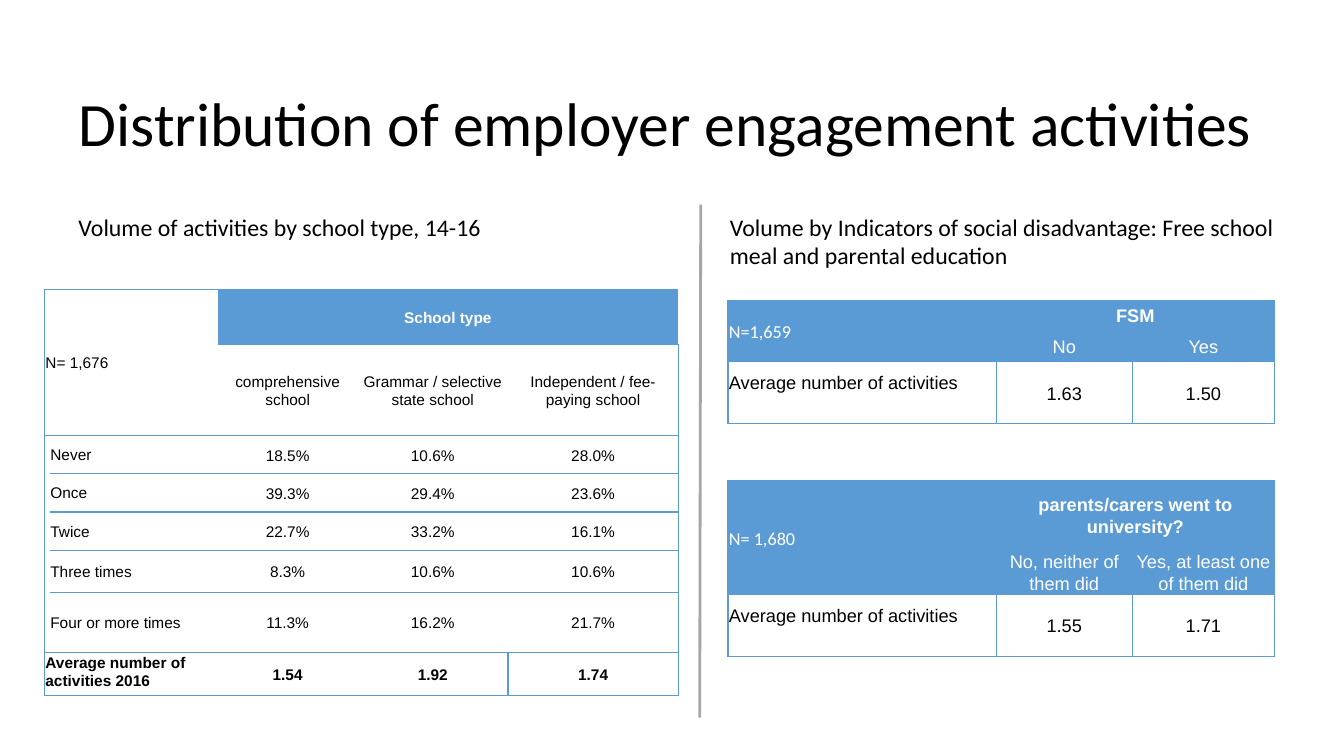
from pptx import Presentation
from pptx import util as u
from pptx.dml.color import RGBColor
from pptx.enum import shapes, text
from pptx.oxml import ns
from lxml import etree

BLUE, GREY, BLACK, WHITE = "5B9BD5", "A6A6A6", "000000", "FFFFFF"
LEFT, CENTER = text.PP_ALIGN.LEFT, text.PP_ALIGN.CENTER
MIDDLE, TOP = text.MSO_ANCHOR.MIDDLE, text.MSO_ANCHOR.TOP


def colour(value):
    return RGBColor.from_string(value)


def write(frame, words, size=11, font="Arial", color=BLACK, bold=False,
          align=LEFT, spacing=1.07):
    para = frame.paragraphs[0]
    para.alignment = align
    para.line_spacing = spacing
    span = para.add_run()
    span.text = words
    span.font.name, span.font.size, span.font.bold = font, u.Pt(size), bold
    span.font.color.rgb = colour(color)


class Page:
    """One slide and the style its elements share."""
    font = "Calibri"
    inset = u.Inches(0.1)

    def __init__(self, deck):
        self.slide = deck.slides.add_slide(deck.slide_layouts[5])

    def fill_box(self, box, words, size, anchor, spacing):
        frame = box.text_frame
        frame.word_wrap = True
        frame.auto_size = text.MSO_AUTO_SIZE.NONE
        frame.vertical_anchor = anchor
        frame.margin_left = frame.margin_right = self.inset
        frame.margin_top = frame.margin_bottom = self.inset
        write(frame, words, size=size, font=self.font, spacing=spacing)

    def title(self, words, left, top, width, height):
        box = self.slide.shapes.title
        box.left, box.top = u.Inches(left), u.Inches(top)
        box.width, box.height = u.Inches(width), u.Inches(height)
        self.fill_box(box, words, 44, MIDDLE, 1.0)

    def heading(self, words, left, top, width, height):
        box = self.slide.shapes.add_textbox(*map(u.Inches, (left, top, width, height)))
        self.fill_box(box, words, 17, TOP, 0.97)

    def divider(self, x1, y1, x2, y2):
        line = self.slide.shapes.add_connector(
            shapes.MSO_CONNECTOR.STRAIGHT, *map(u.Inches, (x1, y1, x2, y2)))
        line.line.color.rgb = colour(GREY)
        line.line.width = u.Pt(2)
        etree.SubElement(line._element.spPr, ns.qn("a:effectLst"))

    def table(self, left, top, columns, rows, merges):
        table = self.slide.shapes.add_table(
            len(rows), len(columns), u.Inches(left), u.Inches(top),
            u.Inches(sum(columns)), u.Inches(sum(rows))).table
        table.first_row = table.horz_banding = False
        for column, width in zip(table.columns, columns):
            column.width = u.Inches(width)
        for row, height in zip(table.rows, rows):
            row.height = u.Inches(height)
        for first, last in merges:
            table.cell(*first).merge(table.cell(*last))
        return table

    def cell(self, cell, words="", fill=WHITE, sides="LRTB", anchor=MIDDLE,
             margins=(0.01, 0.01), **style):
        cell.margin_left, cell.margin_top = map(u.Inches, margins)
        cell.margin_right, cell.margin_bottom = u.Inches(0.01), 0
        cell.vertical_anchor = anchor
        if words:
            write(cell.text_frame, words, **style)
        # Borders come before the fill in the cell properties
        props = cell._tc.get_or_add_tcPr()
        for side in "LRTB":
            edge = etree.SubElement(props, ns.qn("a:ln" + side), w=str(u.Pt(1)))
            if side in sides:
                paint = etree.SubElement(edge, ns.qn("a:solidFill"))
                etree.SubElement(paint, ns.qn("a:srgbClr"), val=BLUE)
            else:
                etree.SubElement(edge, ns.qn("a:noFill"))
        cell.fill.solid()
        cell.fill.fore_color.rgb = colour(fill)


def school_sides(row, col):
    """Horizontal rules everywhere except inside the merged left blocks."""
    sides = "TB"
    if row < 2 and col < 3:
        sides = "TB"[row]
    elif 2 <= row <= 6 and col == 0:
        sides = {2: "T", 6: "B"}.get(row, "")
    if col == 0 or (row, col) == (7, 5):
        sides += "L"
    if col == 5 or (row, col) == (7, 4):
        sides += "R"
    return sides


def school_table(page):
    schools = ["comprehensive school", "Grammar / selective state school",
               "Independent / fee-paying school"]
    shares = [("Never", "18.5%", "10.6%", "28.0%"),
              ("Once", "39.3%", "29.4%", "23.6%"),
              ("Twice", "22.7%", "33.2%", "16.1%"),
              ("Three times", "8.3%", "10.6%", "10.6%"),
              ("Four or more times", "11.3%", "16.2%", "21.7%")]
    grid = [["N= 1,676", "", "", "School type", "", ""],
            ["", "", "", *schools],
            *[["", label, "", *values] for label, *values in shares],
            ["Average number of activities 2016", "", "", "1.54", "1.92", "1.74"]]
    table = page.table(
        0.44, 2.87, [0.04, 1.6, 0.05, 1.39, 1.49, 1.69],
        [0.55, 0.9, 0.38, 0.38, 0.38, 0.42, 0.59, 0.43],
        [((0, 0), (1, 2)), ((0, 3), (0, 5)), ((2, 0), (6, 0)), ((7, 0), (7, 1))])
    for r, row in enumerate(grid):
        for c, words in enumerate(row):
            header = r == 0 and c > 2
            page.cell(table.cell(r, c), words, fill=BLUE if header else WHITE,
                      sides=school_sides(r, c),
                      anchor=TOP if (r, c) == (7, 0) else MIDDLE,
                      margins=(0, 0) if c == 1 else (0.01, 0.01),
                      color=WHITE if header else BLACK,
                      bold=header or r == 7, align=CENTER if c > 2 else LEFT)


def average_table(page, top, rows, sample, question, answers, averages):
    grid = [[sample, question, ""], ["", *answers],
            ["Average number of activities", *averages]]
    table = page.table(7.22, top, [2.66, 1.35, 1.41], rows,
                       [((0, 0), (1, 0)), ((0, 1), (0, 2))])
    for r, row in enumerate(grid):
        for c, words in enumerate(row):
            header = r < 2
            label = (r, c) == (2, 0)
            page.cell(table.cell(r, c), words, fill=BLUE if header else WHITE,
                      anchor=TOP if label else MIDDLE,
                      margins=(0.01, 0.1 if label else 0.01), size=13,
                      font="Calibri" if header and c == 0 else "Arial",
                      color=WHITE if header else BLACK,
                      bold=r == 0 and c > 0, align=CENTER if c else LEFT)


def main():
    deck = Presentation()
    deck.slide_width, deck.slide_height = u.Inches(13.33), u.Inches(7.5)
    page = Page(deck)

    # Title, headings and divider
    page.title("Distribution of employer engagement activities", 0.68, 0.48, 12.21, 1.45)
    page.heading("Volume of activities by school type, 14-16", 0.68, 2.03, 5.67, 0.83)
    page.heading("Volume by Indicators of social disadvantage: Free school meal "
                 "and parental education", 7.14, 2.03, 5.95, 0.83)
    page.divider(6.95, 2.03, 6.94, 7.12)

    # Tables
    school_table(page)
    average_table(page, 2.98, [0.3, 0.31, 0.61], "N=1,659", "FSM",
                  ["No", "Yes"], ["1.63", "1.50"])
    average_table(page, 4.77, [0.68, 0.45, 0.61], "N= 1,680",
                  "parents/carers went to university?",
                  ["No, neither of them did", "Yes, at least one of them did"],
                  ["1.55", "1.71"])
    deck.save("out.pptx")


if __name__ == "__main__":
    main()
